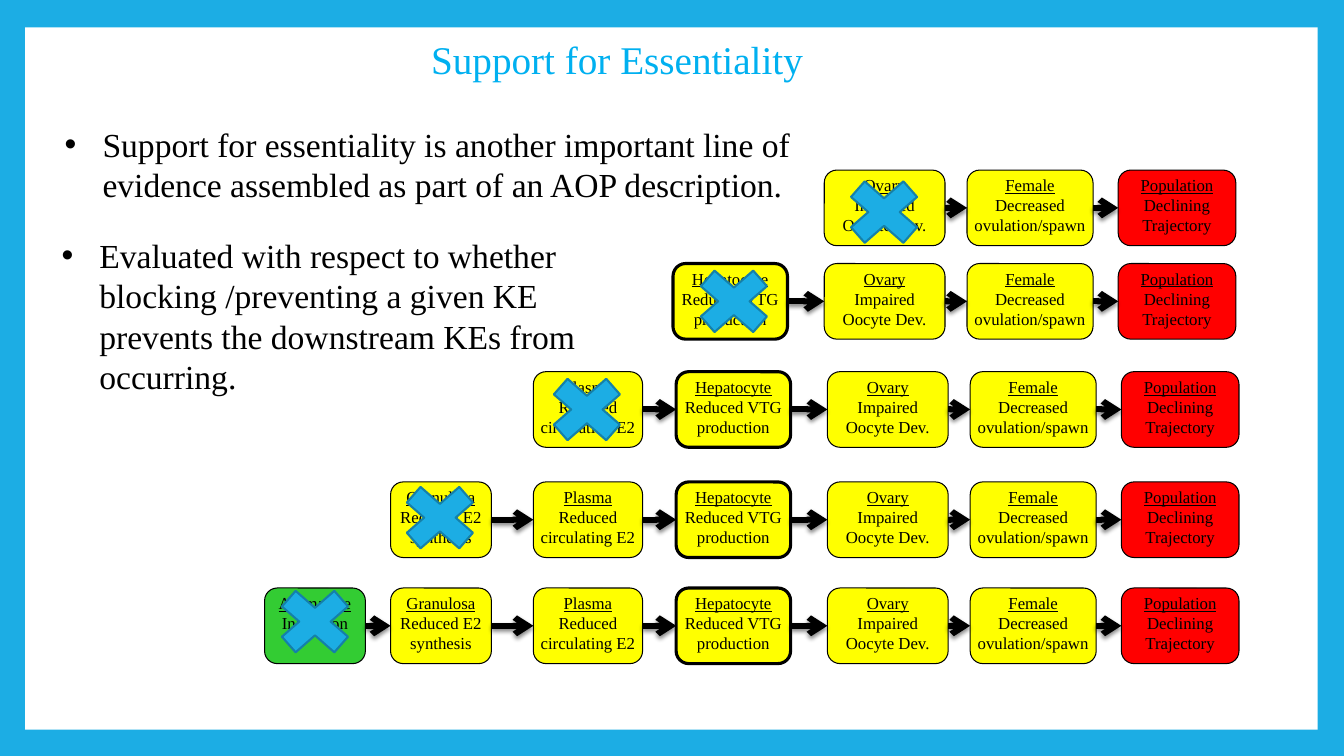
from dataclasses import dataclass
from lxml.etree import SubElement
from pptx import Presentation
from pptx.dml.color import RGBColor
from pptx.enum.shapes import MSO_CONNECTOR, MSO_SHAPE
from pptx.enum.text import MSO_ANCHOR, MSO_AUTO_SIZE, PP_ALIGN
from pptx.oxml import parse_xml
from pptx.oxml.ns import nsdecls, qn
from pptx.shapes.autoshape import Shape
from pptx.slide import Slide
from pptx.util import Emu, Pt

FONT = "Times New Roman"
BLACK, WHITE, BLUE = "000000", "FFFFFF", "1CADE4"
YELLOW, RED, GREEN = "FFFF00", "FF0000", "33CC33"
HIGH = 72
CROSS = (96, 84)
SHADOW = (
    f'<a:effectLst {nsdecls("a")}><a:outerShdw blurRad="38100" dist="25400" '
    'dir="5400000" rotWithShape="0"><a:srgbClr val="000000">'
    '<a:alpha val="45000"/></a:srgbClr></a:outerShdw></a:effectLst>'
)


@dataclass
class Event:
    head: str
    text: str
    left: int
    width: int
    fill: str = YELLOW
    line: float = 0.75


@dataclass
class Chain:
    """A run of events from `first` on, whose first event is crossed out."""
    top: int
    first: int
    shift: int
    cross: tuple[int, int]


EVENTS = [
    Event("Aromatase", "Inhibition", 252, 96, GREEN),
    Event("Granulosa", "Reduced E2 synthesis", 372, 96),
    Event("Plasma", "Reduced circulating E2", 508, 104),
    Event("Hepatocyte", "Reduced VTG production", 644, 109, line=2.25),
    Event("Ovary", "Impaired Oocyte Dev.", 788, 115),
    Event("Female", "Decreased ovulation/spawn", 924, 120),
    Event("Population", "Declining Trajectory", 1068, 112, RED),
]
CHAINS = [
    Chain(560, 0, 0, (252, 550)),
    Chain(459, 1, 0, (371, 451)),
    Chain(354, 2, 0, (511, 348)),
    Chain(251, 3, -3, (651, 245)),
    Chain(162, 4, -3, (794, 160)),
]
POINTS = [
    ("Support for essentiality is another important line of evidence "
     "assembled as part of an AOP description.", (52, 113, 739, 126)),
    ("Evaluated with respect to whether blocking /preventing a given KE "
     "prevents the downstream KEs from occurring.", (49, 219, 572, 204)),
]


def px(size: int) -> Emu:
    return Emu(size * 9525)


def rgb(code: str) -> RGBColor:
    return RGBColor.from_string(code)


def set_font(par, size: int, color: str = BLACK) -> None:
    par.font.name, par.font.size = FONT, Pt(size)
    par.font.color.rgb = rgb(color)


def fill_holder(holder, text: str, box: tuple[int, ...], size: int,
                color: str = BLACK) -> None:
    holder.left, holder.top, holder.width, holder.height = map(px, box)
    frame = holder.text_frame
    frame.text = text
    frame.auto_size = MSO_AUTO_SIZE.NONE
    frame.vertical_anchor = MSO_ANCHOR.TOP
    par = frame.paragraphs[0]
    par.alignment = PP_ALIGN.LEFT
    par.space_before = Pt(0)
    set_font(par, size, color)


def add_shape(slide: Slide, kind: MSO_SHAPE, box: tuple[int, ...], fill: str,
              line: str = "", weight: float = 0) -> Shape:
    shape = slide.shapes.add_shape(kind, *map(px, box))
    shape.shadow.inherit = False
    shape.fill.solid()
    shape.fill.fore_color.rgb = rgb(fill)
    if line:
        shape.line.color.rgb = rgb(line)
        shape.line.width = Pt(weight)
    else:
        shape.line.fill.background()
    return shape


def add_event(slide: Slide, event: Event, left: int, top: int) -> None:
    shape = add_shape(slide, MSO_SHAPE.ROUNDED_RECTANGLE,
                      (left, top, event.width, HIGH), event.fill, BLACK, event.line)
    frame = shape.text_frame
    frame.word_wrap = True
    frame.vertical_anchor = MSO_ANCHOR.TOP
    frame.margin_left = frame.margin_right = px(2)
    frame.margin_top = frame.margin_bottom = px(1)
    frame.text = f"{event.head}\n{event.text}"
    for par in frame.paragraphs:
        par.alignment = PP_ALIGN.CENTER
        set_font(par, 12)
    frame.paragraphs[0].font.underline = True


def add_arrow(slide: Slide, start: int, end: int, y: int) -> None:
    arrow = slide.shapes.add_connector(
        MSO_CONNECTOR.STRAIGHT, px(start), px(y), px(end), px(y))
    arrow.line.color.rgb = rgb(BLACK)
    arrow.line.width = Pt(4.25)
    props = arrow.element.spPr
    SubElement(props.find(qn("a:ln")), qn("a:tailEnd"), type="arrow")
    props.append(parse_xml(SHADOW))


def add_chain(slide: Slide, chain: Chain) -> None:
    events = EVENTS[chain.first:]
    for event in events:
        add_event(slide, event, event.left + chain.shift, chain.top)
    for prev, following in zip(events, events[1:]):
        add_arrow(slide, prev.left + prev.width + chain.shift,
                  following.left + chain.shift, chain.top + HIGH // 2)
    add_shape(slide, MSO_SHAPE.MATH_MULTIPLY, chain.cross + CROSS,
              BLUE, "1580A9", 1.5)


def main() -> None:
    deck = Presentation()
    deck.slide_width, deck.slide_height = px(1280), px(720)
    slide = deck.slides.add_slide(deck.slide_layouts.get_by_name("Two Content"))
    slide.background.fill.solid()
    slide.background.fill.fore_color.rgb = rgb(BLUE)

    title, *bodies = slide.placeholders
    panel = add_shape(slide, MSO_SHAPE.RECTANGLE, (24, 26, 1231, 669), WHITE)
    title.element.addprevious(panel.element)
    fill_holder(title, "Support for Essentiality", (401, 29, 384, 55), 28, "00B0F0")
    for body, (text, box) in zip(bodies, POINTS):
        fill_holder(body, text, box, 24)

    for chain in CHAINS:
        add_chain(slide, chain)
    deck.save("out.pptx")


if __name__ == "__main__":
    main()
